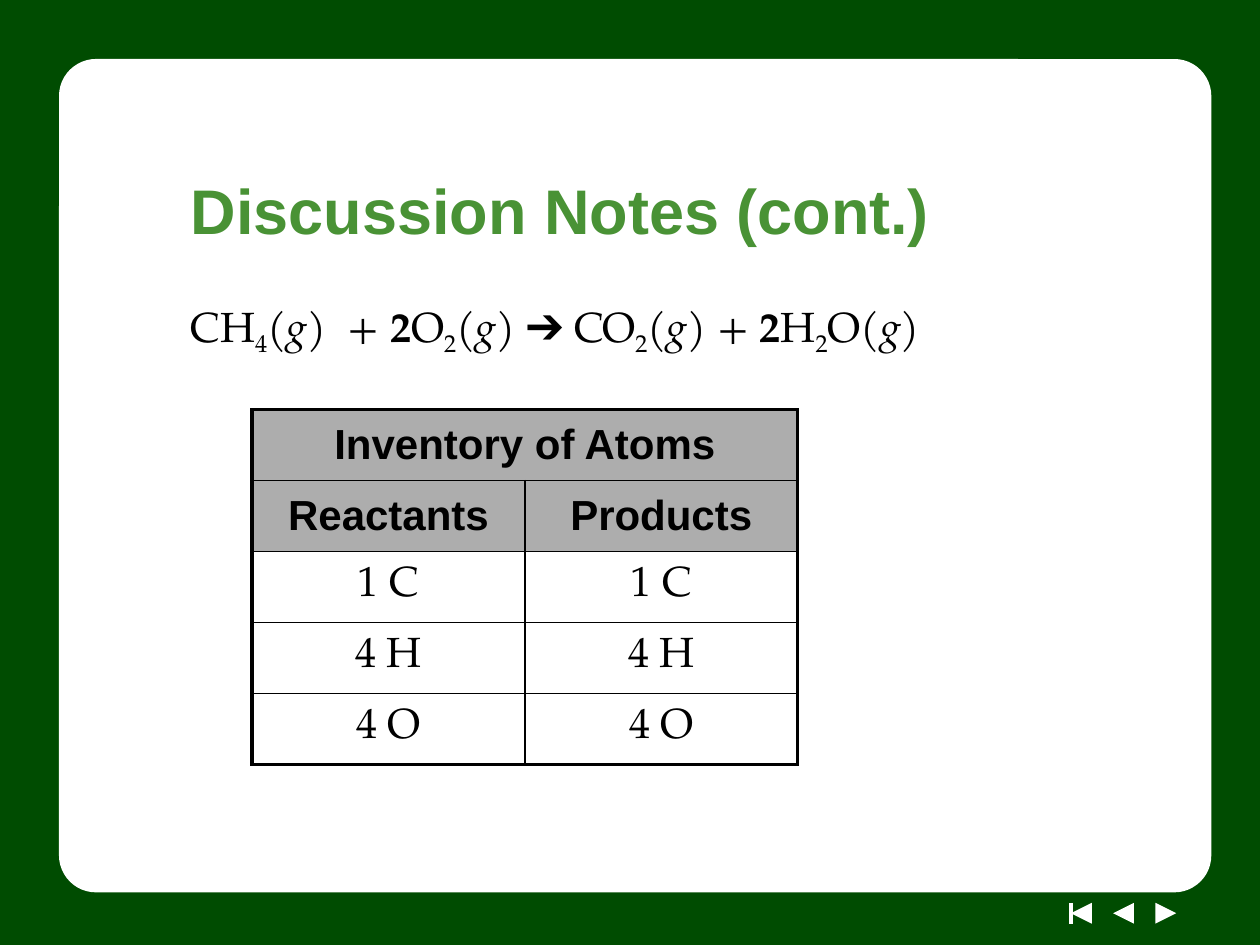
from dataclasses import dataclass

from lxml import etree
from pptx import Presentation
from pptx.dml.color import RGBColor
from pptx.enum.shapes import MSO_CONNECTOR, MSO_SHAPE
from pptx.enum.text import MSO_ANCHOR, PP_ALIGN
from pptx.oxml.ns import qn
from pptx.util import Cm, Pt

RECTANGLE = MSO_SHAPE.RECTANGLE
ROUNDED = MSO_SHAPE.ROUNDED_RECTANGLE
TRIANGLE = MSO_SHAPE.ISOSCELES_TRIANGLE
STRAIGHT = MSO_CONNECTOR.STRAIGHT
TOP, MIDDLE = MSO_ANCHOR.TOP, MSO_ANCHOR.MIDDLE
LEFT, CENTER = PP_ALIGN.LEFT, PP_ALIGN.CENTER


@dataclass(frozen=True)
class Theme:
    frame: str = "004C01"
    panel: str = "FFFFFF"
    title: str = "499235"
    ink: str = "000000"
    header: str = "ADADAD"
    sans: str = "Arial"
    serif: str = "TeX Gyre Pagella"
    title_size: float = 36
    body_size: float = 24
    outer_rule: float = 2.25
    inner_rule: float = 1


class SlideBuilder:
    """Draws styled elements on the current slide."""

    def __init__(self, slide, theme):
        self.slide = slide
        self.theme = theme

    def shape(self, kind, box, color, adjust=None, rotation=0, outline=0):
        shape = self.slide.shapes.add_shape(kind, *map(Cm, box))
        shape.shadow.inherit = False
        shape.fill.solid()
        shape.fill.fore_color.rgb = RGBColor.from_string(color)
        if outline:
            shape.line.color.rgb = RGBColor.from_string(color)
            shape.line.width = Pt(outline)
        else:
            shape.line.fill.background()
        if adjust is not None:
            shape.adjustments[0] = adjust
        shape.rotation = rotation

    def line(self, start, end, color, width):
        line = self.slide.shapes.add_connector(STRAIGHT, *map(Cm, start + end))
        line.line.color.rgb = RGBColor.from_string(color)
        line.line.width = Pt(width)
        etree.SubElement(line._element.spPr, qn("a:effectLst"))

    def runs(self, paragraph, parts, font, size, color):
        for text, style in parts:
            run = paragraph.add_run()
            run.text = text
            run.font.name = font
            run.font.size = Pt(size)
            run.font.color.rgb = RGBColor.from_string(color)
            run.font.bold = style == "bold"
            run.font.italic = style == "italic"
            if style == "sub":
                run._r.get_or_add_rPr().set("baseline", "-25000")

    def text(self, box, parts, font, size, color, anchor):
        frame = self.slide.shapes.add_textbox(*map(Cm, box)).text_frame
        frame.word_wrap = True
        frame.vertical_anchor = anchor
        frame.paragraphs[0].alignment = LEFT
        self.runs(frame.paragraphs[0], parts, font, size, color)

    def borders(self, cell, outer_sides):
        properties = cell._tc.get_or_add_tcPr()
        for side in "LRTB":
            width = self.theme.outer_rule if side in outer_sides else self.theme.inner_rule
            rule = etree.SubElement(properties, qn(f"a:ln{side}"), w=str(Pt(width)))
            fill = etree.SubElement(rule, qn("a:solidFill"))
            etree.SubElement(fill, qn("a:srgbClr"), val=self.theme.ink)

    def table(self, corner, column_width, row_height, rows, header_rows):
        theme = self.theme
        row_count, column_count = len(rows), len(rows[-1])
        size = (column_width * column_count, row_height * row_count)
        table = self.slide.shapes.add_table(
            row_count, column_count, *map(Cm, corner + size)).table
        table.first_row = table.horz_banding = False
        for r, values in enumerate(rows):
            table.rows[r].height = Cm(row_height)
            for c in range(column_count):
                cell = table.cell(r, c)
                edges = {"L": c == 0, "R": c == column_count - 1 or len(values) == 1,
                         "T": r == 0, "B": r == row_count - 1}
                self.borders(cell, [side for side, outer in edges.items() if outer])
                is_header = r < header_rows
                if is_header:
                    cell.fill.solid()
                    cell.fill.fore_color.rgb = RGBColor.from_string(theme.header)
                else:
                    cell.fill.background()
                cell.vertical_anchor = MIDDLE
                if c < len(values):
                    paragraph = cell.text_frame.paragraphs[0]
                    paragraph.alignment = CENTER
                    self.runs(paragraph, [(values[c], "bold" if is_header else "")],
                              theme.sans if is_header else theme.serif,
                              theme.body_size, theme.ink)
            if len(values) == 1:
                table.cell(r, 0).merge(table.cell(r, column_count - 1))


def main():
    presentation = Presentation()
    presentation.slide_width, presentation.slide_height = Cm(25.4), Cm(19.05)
    theme = Theme()
    builder = SlideBuilder(
        presentation.slides.add_slide(presentation.slide_layouts[6]), theme)

    builder.shape(RECTANGLE, (0, 0, 25.4, 19.05), theme.frame)
    nav_left, nav_top, nav_size, nav_step = 21.59, 18.2, 0.42, 0.85
    for position, rotation in enumerate((270, 270, 90)):
        builder.shape(TRIANGLE, (nav_left + position * nav_step, nav_top, nav_size, nav_size),
                      theme.panel, adjust=0.5, rotation=rotation)
    builder.line((nav_left, nav_top), (nav_left, nav_top + nav_size), theme.panel, 2)
    builder.shape(ROUNDED, (1.27, 1.27, 23.07, 16.64), theme.panel, adjust=0.04, outline=4.5)

    builder.text((3.6, 2.96, 20.53, 2.54), [("Discussion Notes (cont.)", "bold")],
                 theme.sans, theme.title_size, theme.title, MIDDLE)
    equation = [
        ("CH", ""), ("4", "sub"), ("(", ""), ("g", "italic"), (")  + ", ""),
        ("2", "bold"), ("O", ""), ("2", "sub"), ("(", ""), ("g", "italic"),
        (") ➔ CO", ""), ("2", "sub"), ("(", ""), ("g", "italic"), (") + ", ""),
        ("2", "bold"), ("H", ""), ("2", "sub"), ("O(", ""), ("g", "italic"), (")", ""),
    ]
    builder.text((3.6, 5.93, 19.9, 10.16), equation,
                 theme.serif, theme.body_size, theme.ink, TOP)

    inventory = [("Inventory of Atoms",), ("Reactants", "Products")]
    inventory += [(atoms, atoms) for atoms in ("1 C", "4 H", "4 O")]
    builder.table((5.08, 8.26), 5.5, 1.43, inventory, header_rows=2)

    presentation.save("out.pptx")


if __name__ == "__main__":
    main()
